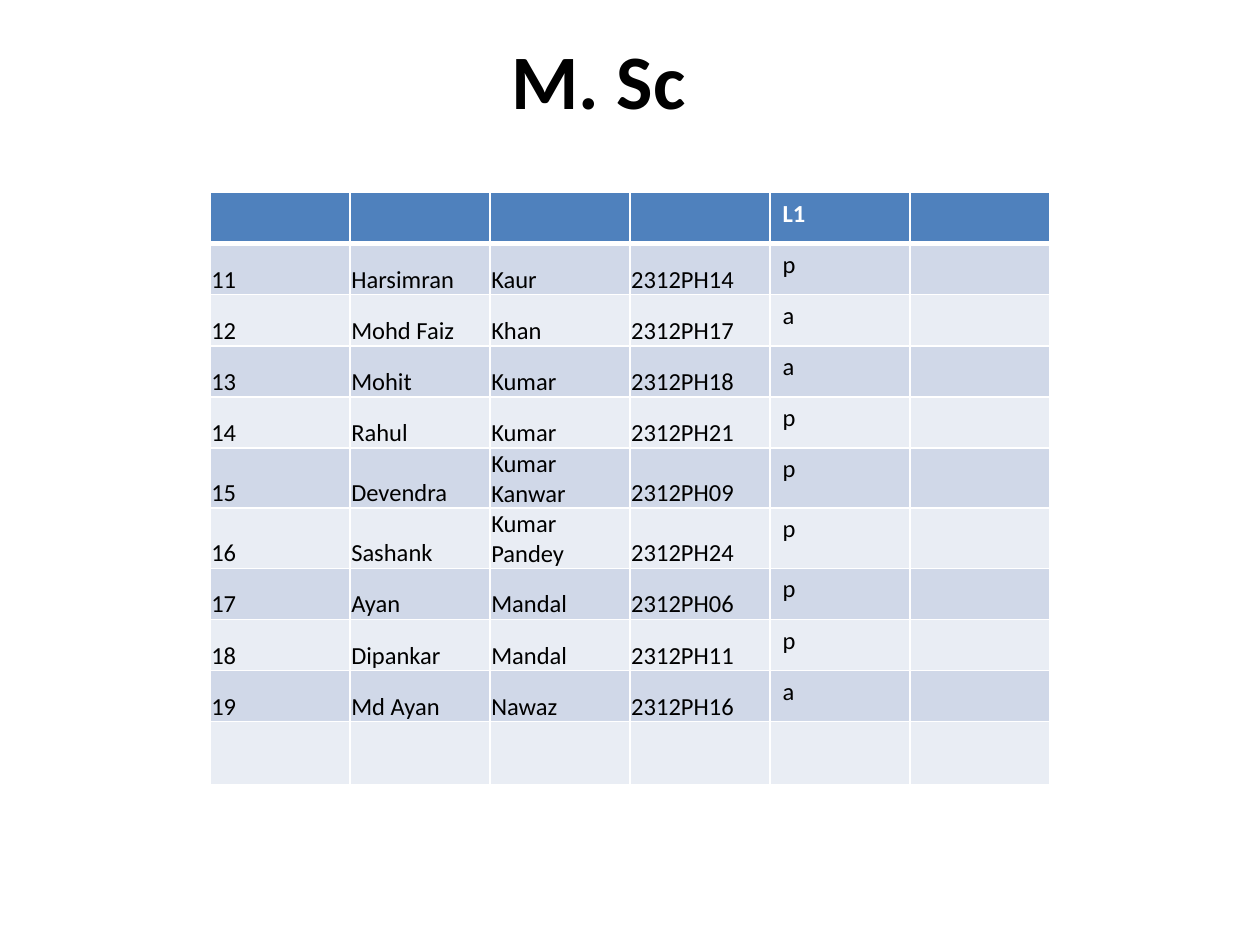
"""Build the M. Sc attendance slide with its student table."""
from dataclasses import dataclass

from lxml import etree
from pptx import Presentation
from pptx.dml.color import RGBColor
from pptx.enum.text import MSO_ANCHOR, PP_ALIGN
from pptx.oxml.ns import qn
from pptx.util import Pt

LEFT, CENTER = PP_ALIGN.LEFT, PP_ALIGN.CENTER
TOP, MIDDLE, BOTTOM = MSO_ANCHOR.TOP, MSO_ANCHOR.MIDDLE, MSO_ANCHOR.BOTTOM


@dataclass(frozen=True)
class Theme:
    font: str = "Calibri"
    ink: str = "000000"
    paper: str = "FFFFFF"
    header: str = "4F81BD"
    bands: tuple = ("D0D8E8", "E9EDF4")
    title_size: int = 44
    body_size: int = 14


THEME = Theme()


def write(frame, text, size=THEME.body_size, color=THEME.ink, bold=False, align=LEFT):
    paragraph = frame.paragraphs[0]
    paragraph.alignment = align
    run = paragraph.add_run()
    run.text = text
    run.font.name = THEME.font
    run.font.size = Pt(size)
    run.font.bold = bold
    run.font.color.rgb = RGBColor.from_string(color)


def set_borders(cell, **widths):
    properties = cell._tc.get_or_add_tcPr()
    for side, width in widths.items():
        line = etree.SubElement(properties, qn(f"a:ln{side}"), w=str(Pt(width)))
        fill = etree.SubElement(line, qn("a:solidFill"))
        etree.SubElement(fill, qn("a:srgbClr"), val=THEME.paper)


rows = [
    ("", "", "", "", "L1", ""),
    ("11", "Harsimran", "Kaur", "2312PH14", "p", ""),
    ("12", "Mohd Faiz", "Khan", "2312PH17", "a", ""),
    ("13", "Mohit", "Kumar", "2312PH18", "a", ""),
    ("14", "Rahul", "Kumar", "2312PH21", "p", ""),
    ("15", "Devendra", "Kumar Kanwar", "2312PH09", "p", ""),
    ("16", "Sashank", "Kumar Pandey", "2312PH24", "p", ""),
    ("17", "Ayan", "Mandal", "2312PH06", "p", ""),
    ("18", "Dipankar", "Mandal", "2312PH11", "p", ""),
    ("19", "Md Ayan", "Nawaz", "2312PH16", "a", ""),
    ("", "", "", "", "", ""),
]
column_count = len(rows[0])
attendance_column = 4
column_width, row_height, last_row_height = 80, 29.2, 36

presentation = Presentation()
presentation.slide_width, presentation.slide_height = Pt(720), Pt(540)
slide = presentation.slides.add_slide(presentation.slide_layouts[6])

title = slide.shapes.add_textbox(Pt(18), Pt(0), Pt(648), Pt(90)).text_frame
title.word_wrap = True
title.vertical_anchor = MIDDLE
write(title, "M. Sc", size=THEME.title_size, bold=True, align=CENTER)

students = slide.shapes.add_table(
    len(rows), column_count, Pt(120), Pt(110),
    Pt(column_count * column_width),
    Pt((len(rows) - 1) * row_height + last_row_height),
).table
for column in students.columns:
    column.width = Pt(column_width)

for row_index, values in enumerate(rows):
    is_header = row_index == 0
    is_last = row_index == len(rows) - 1
    students.rows[row_index].height = Pt(last_row_height if is_last else row_height)
    background = THEME.header if is_header else THEME.bands[(row_index - 1) % 2]
    for column_index, value in enumerate(values):
        cell = students.cell(row_index, column_index)
        set_borders(cell, L=1, R=1, T=3 if row_index == 1 else 1, B=3 if is_header else 1)
        cell.fill.solid()
        cell.fill.fore_color.rgb = RGBColor.from_string(background)
        if not value:
            continue
        if column_index < attendance_column:
            cell.vertical_anchor = BOTTOM
            cell.margin_left = cell.margin_right = cell.margin_top = Pt(0.75)
            cell.margin_bottom = Pt(0)
        else:
            cell.vertical_anchor = TOP
        write(cell.text_frame, value, bold=is_header,
              color=THEME.paper if is_header else THEME.ink)

presentation.save("out.pptx")
